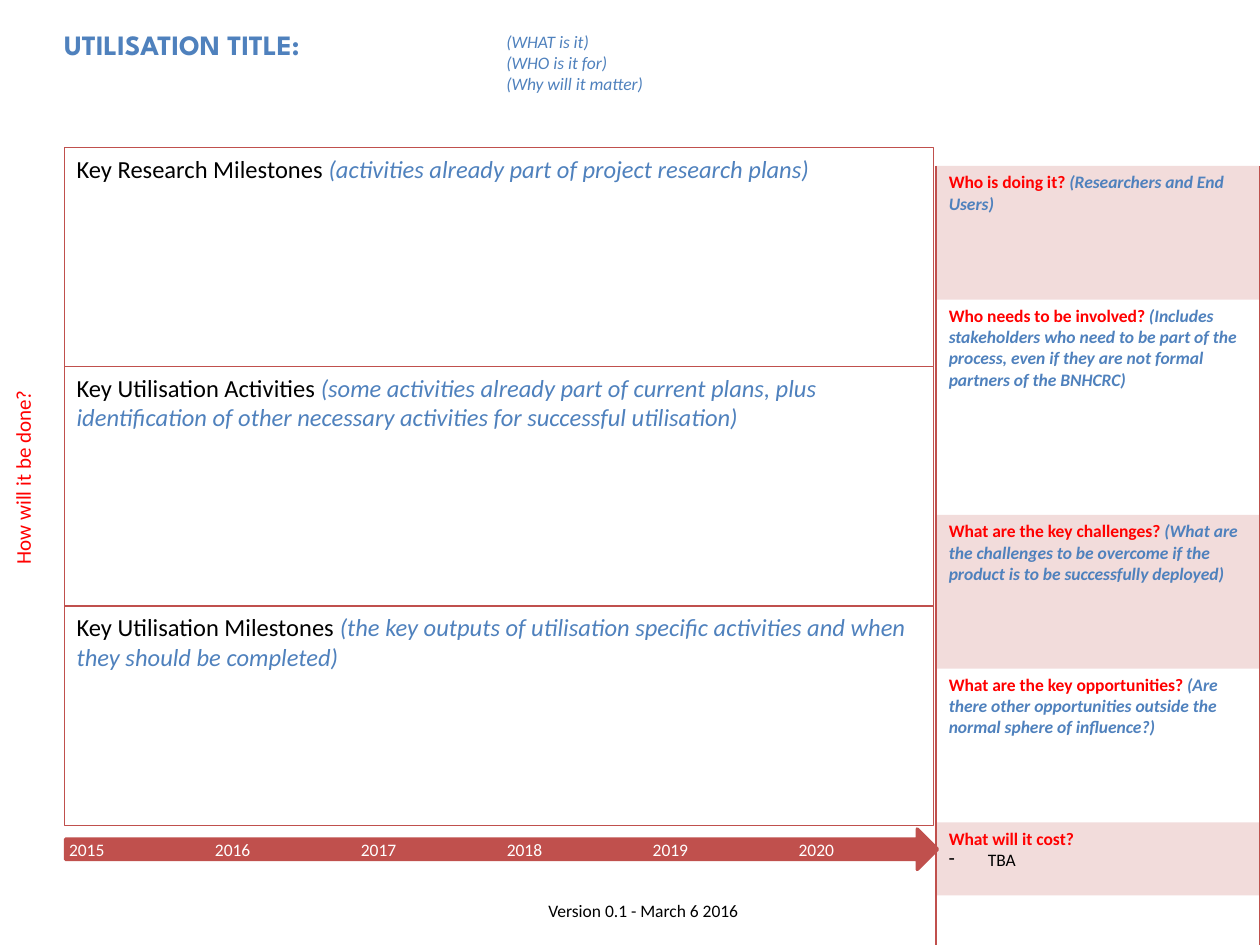
from lxml.etree import SubElement
from pptx import Presentation
from pptx.dml.color import RGBColor
from pptx.enum.shapes import MSO_SHAPE as Shape
from pptx.enum.text import MSO_ANCHOR as Anchor, MSO_AUTO_SIZE as AutoSize, PP_ALIGN as Align
from pptx.oxml import parse_xml
from pptx.oxml.ns import nsdecls, qn
from pptx.util import Inches, Pt

RED, BLUE, BRICK, BLACK, WHITE = "FF0000", "4F81BD", "C0504D", "000000", "FFFFFF"


def rgb(code):
    return RGBColor.from_string(code)


def add_span(para, text, color, **format_values):
    span = para.add_run()
    span.text = text
    span.font.color.rgb = rgb(color)
    values = {"name": "Calibri", "size": Pt(10)} | format_values
    for name, value in values.items():
        setattr(span.font, name, value)


deck = Presentation()
deck.slide_width, deck.slide_height = Inches(10), Inches(7.5)
page = deck.slides.add_slide(deck.slide_layouts[6])

# Title
title = page.shapes.add_textbox(Inches(0.51), Inches(0.22), Inches(3.41), Inches(0.89))
frame = title.text_frame
frame.word_wrap = True
frame.margin_left = frame.margin_top = frame.margin_bottom = 0
add_span(frame.paragraphs[0], "UTILISATION TITLE:", BLUE,
         name="League Spartan", size=Pt(16), bold=True)

# Timeline arrow
arrow = page.shapes.add_shape(Shape.RIGHT_ARROW, Inches(0.52), Inches(6.58),
                              Inches(6.92), Inches(0.32))
arrow.shadow.inherit = False
arrow.fill.solid()
arrow.fill.fore_color.rgb = arrow.line.color.rgb = rgb(BRICK)
arrow.line.width = Pt(2)

# Small texts: version, questions and the years on the arrow
labels = [
    (3.92, 7.09, 2.37, 0.27, ["Version 0.1 - March 6 2016"], BLACK, Align.CENTER, False),
    (3.92, 0.2, 5.97, 0.61, ["(WHAT is it)", "(WHO is it for)", "(Why will it matter)"],
     BLUE, Align.LEFT, True),
]
for index in range(6):
    labels.append((0.45 + 1.158 * index, 6.61, 0.54, 0.27, [str(2015 + index)],
                   WHITE, Align.LEFT, False))
for left, top, width, height, lines, color, align, italic in labels:
    box = page.shapes.add_textbox(Inches(left), Inches(top), Inches(width), Inches(height))
    frame = box.text_frame
    frame.word_wrap = True
    frame.auto_size = AutoSize.SHAPE_TO_FIT_TEXT
    for number, line in enumerate(lines):
        para = frame.add_paragraph() if number else frame.paragraphs[0]
        para.alignment = align
        add_span(para, line, color, italic=italic)

# Stacked plan sections
sections = [
    (1.74, "Key Research Milestones ", "(activities already part of project research plans)"),
    (1.9, "Key Utilisation Activities ",
     "(some activities already part of current plans, plus identification of other "
     "necessary activities for successful utilisation)"),
    (1.74, "Key Utilisation Milestones ",
     "(the key outputs of utilisation specific activities and when they should be completed)"),
]
top = 1.17
for height, heading, hint in sections:
    section = page.shapes.add_shape(Shape.RECTANGLE, Inches(0.51), Inches(top),
                                    Inches(6.9), Inches(height))
    section.shadow.inherit = False
    section.fill.background()
    section.line.color.rgb = rgb(BRICK)
    section.line.width = Pt(0.75)
    frame = section.text_frame
    frame.word_wrap = True
    frame.vertical_anchor = Anchor.TOP
    para = frame.paragraphs[0]
    para.alignment = Align.LEFT
    add_span(para, heading, BLACK, size=Pt(14))
    add_span(para, hint, BLUE, size=Pt(14), italic=True)
    top += height

# Question table: height, question, hint, shaded
questions = [
    (0.26, "", "", False),
    (1.06, "Who is doing it?", " (Researchers and End Users)", True),
    (1.71, "Who needs to be involved?",
     " (Includes stakeholders who need to be part of the process, even if they are "
     "not formal partners of the BNHCRC)", False),
    (1.22, "What are the key challenges? ",
     "(What are the challenges to be overcome if the product is to be successfully deployed)",
     True),
    (1.22, "What are the key opportunities?",
     " (Are there other opportunities outside the normal sphere of influence?)", False),
    (0.58, "What will it cost?", "", True),
    (0.39, "", "", False),
]
table = page.shapes.add_table(len(questions), 1, Inches(7.43), Inches(1.05),
                              Inches(2.57), Inches(6.44)).table
table.first_row = table.horz_banding = False
NO_STYLE_NO_GRID = "{2D5ABB26-0587-4C30-8999-92F81FD0307C}"
table._tbl.tblPr.find(qn("a:tableStyleId")).text = NO_STYLE_NO_GRID
for index, (height, question, hint, shaded) in enumerate(questions):
    table.rows[index].height = Inches(height)
    cell = table.cell(index, 0)
    if index:
        for side in ("lnL", "lnR"):
            cell._tc.get_or_add_tcPr().append(parse_xml(
                f'<a:{side} {nsdecls("a")} w="12700"><a:solidFill>'
                f'<a:srgbClr val="{BRICK}"/></a:solidFill></a:{side}>'))
    if shaded:
        cell.fill.solid()
        cell.fill.fore_color.rgb = rgb(BRICK)
        tint = cell._tc.tcPr.find(qn("a:solidFill")).find(qn("a:srgbClr"))
        SubElement(tint, qn("a:alpha"), val="20000")
    else:
        cell.fill.background()
    para = cell.text_frame.paragraphs[0]
    if question:
        add_span(para, question, RED, bold=True)
    else:
        SubElement(para._p, qn("a:endParaRPr"), sz="1000")
    if hint:
        add_span(para, hint, BLUE, bold=True, italic=True)

cost = table.cell(5, 0).text_frame.add_paragraph()
indent = Inches(0.31)
properties = cost._p.get_or_add_pPr()
properties.set("marL", str(indent))
properties.set("indent", str(-indent))
SubElement(properties, qn("a:buChar"), char="-")
add_span(cost, "TBA", BLACK)

# Rotated side heading
side_heading = page.shapes.add_textbox(Inches(0.03), Inches(3.08), Inches(0.4), Inches(1.5))
frame = side_heading.text_frame
frame.word_wrap = False
frame.auto_size = AutoSize.SHAPE_TO_FIT_TEXT
frame._txBody.bodyPr.set("vert", "vert270")
add_span(frame.paragraphs[0], "How will it be done?", RED, size=Pt(12))

deck.save("out.pptx")
